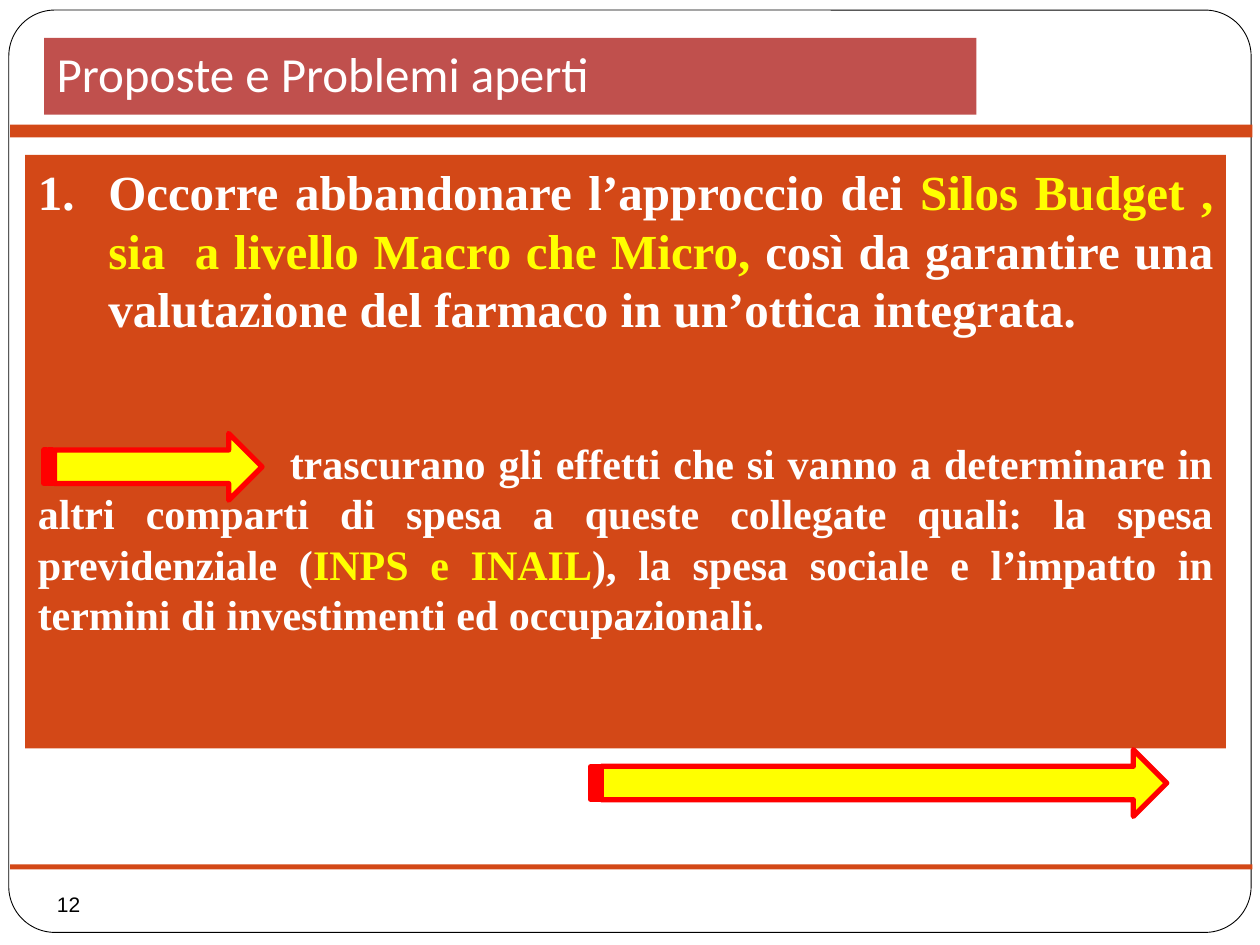
from lxml import etree
from pptx import Presentation
from pptx import util as u
from pptx.dml.color import RGBColor
from pptx.enum import shapes, text
from pptx.oxml.ns import qn

ORANGE, BRICK, WHITE, BLACK = "D34817", "C0504D", "FFFFFF", "000000"
YELLOW, RED = "FFFF00", "FF0000"
SERIF = "Times New Roman"
SHAPE = shapes.MSO_SHAPE


def rgb(value):
    return RGBColor.from_string(value)


def add_child(p, tag, **attrs):
    etree.SubElement(p._p.get_or_add_pPr(), qn(tag), **attrs)


class Deck:
    def __init__(self, width, height):
        self.prs = Presentation()
        self.prs.slide_width = u.Inches(width)
        self.prs.slide_height = u.Inches(height)
        self.s = self.prs.slides.add_slide(self.prs.slide_layouts[1])

    def shape(self, kind, box, fill=None, line=None, weight=1):
        sp = self.s.shapes.add_shape(kind, *map(u.Inches, box))
        sp.shadow.inherit = False
        if fill:
            sp.fill.solid()
            sp.fill.fore_color.rgb = rgb(fill)
        else:
            sp.fill.background()
        if line:
            sp.line.color.rgb = rgb(line)
            sp.line.width = u.Pt(weight)
        else:
            sp.line.fill.background()
        return sp

    def placeholder(self, index, box, fill, anchor):
        """Place a filled placeholder in front of what is drawn so far."""
        sp = self.s.placeholders[index]
        sp.left, sp.top, sp.width, sp.height = map(u.Inches, box)
        sp.fill.solid()
        sp.fill.fore_color.rgb = rgb(fill)
        self.s.shapes._spTree.append(sp._element)
        tf = sp.text_frame
        tf.word_wrap = True
        tf.auto_size = text.MSO_AUTO_SIZE.NONE
        tf.vertical_anchor = anchor
        return tf

    def runs(self, p, parts, size, font, bold=False):
        """Write (text, colour) parts as runs of one paragraph."""
        for words, colour in parts:
            r = p.add_run()
            r.text = words
            r.font.size = u.Pt(size)
            r.font.name = font
            r.font.bold = bold
            r.font.color.rgb = rgb(colour)

    def body_paragraph(self, p, parts, size, margin=0, first=0, before=0, number=False):
        """Add justified text; first is the first line's indent from the margin."""
        p.alignment = text.PP_ALIGN.JUSTIFY
        p.line_spacing = 1.0
        p.space_before = u.Pt(before)
        p.space_after = u.Pt(0)
        pPr = p._p.get_or_add_pPr()
        pPr.set("marL", str(u.Inches(margin)))
        pPr.set("indent", str(u.Inches(first)))
        if number:
            add_child(p, "a:buFont", typeface="+mj-lt")
            add_child(p, "a:buAutoNum", type="arabicPeriod")
        else:
            add_child(p, "a:buNone")
        self.runs(p, parts, size, SERIF, bold=True)

    def arrow(self, left, top, width):
        self.shape(SHAPE.STRIPED_RIGHT_ARROW, (left, top, width, 0.53), YELLOW, RED, 3)

    def page_number(self, number, box):
        tf = self.shape(SHAPE.OVAL, box).text_frame
        tf.margin_left = tf.margin_right = tf.margin_top = tf.margin_bottom = 0
        tf.word_wrap = False
        tf.vertical_anchor = text.MSO_ANCHOR.MIDDLE
        p = tf.paragraphs[0]
        p.alignment = text.PP_ALIGN.CENTER
        self.runs(p, [(number, BLACK)], 12, "Arial")


def main():
    deck = Deck(10, 7.5)

    frame = deck.shape(SHAPE.ROUNDED_RECTANGLE, (0.07, 0.08, 9.86, 7.32), WHITE, BLACK, 0.5)
    frame.adjustments[0] = 0.05
    for top, height in ((0.99, 0.1), (6.86, 0.04)):
        deck.shape(SHAPE.RECTANGLE, (0.08, top, 9.86, height), ORANGE)
    deck.page_number("12", (0.35, 6.98, 0.39, 0.39))

    title = deck.placeholder(0, (0.35, 0.3, 7.4, 0.61), BRICK, text.MSO_ANCHOR.BOTTOM)
    title.margin_bottom = u.Inches(0.1)
    title.paragraphs[0].alignment = text.PP_ALIGN.LEFT
    deck.runs(title.paragraphs[0], [("Proposte e Problemi aperti", WHITE)], 28, "Calibri")

    body = deck.placeholder(1, (0.2, 1.23, 9.53, 4.71), ORANGE, text.MSO_ANCHOR.TOP)
    deck.body_paragraph(body.paragraphs[0], [
        ("Occorre abbandonare l’approccio dei ", WHITE),
        ("Silos Budget , sia  a livello Macro che Micro, ", YELLOW),
        ("così da garantire una valutazione del farmaco in un’ottica integrata. ", WHITE),
    ], 28, margin=0.56, first=-0.56, number=True)
    deck.body_paragraph(body.add_paragraph(), [
        ("trascurano gli effetti che si vanno a determinare in altri comparti "
         "di spesa a queste collegate quali: la spesa previdenziale (", WHITE),
        ("INPS e INAIL", YELLOW),
        ("), la spesa sociale e l’impatto in termini di investimenti ed "
         "occupazionali. ", WHITE),
    ], 24, first=2, before=57)

    deck.arrow(0.35, 3.44, 1.73)
    deck.arrow(4.69, 5.95, 4.57)

    deck.prs.save("out.pptx")


if __name__ == "__main__":
    main()
